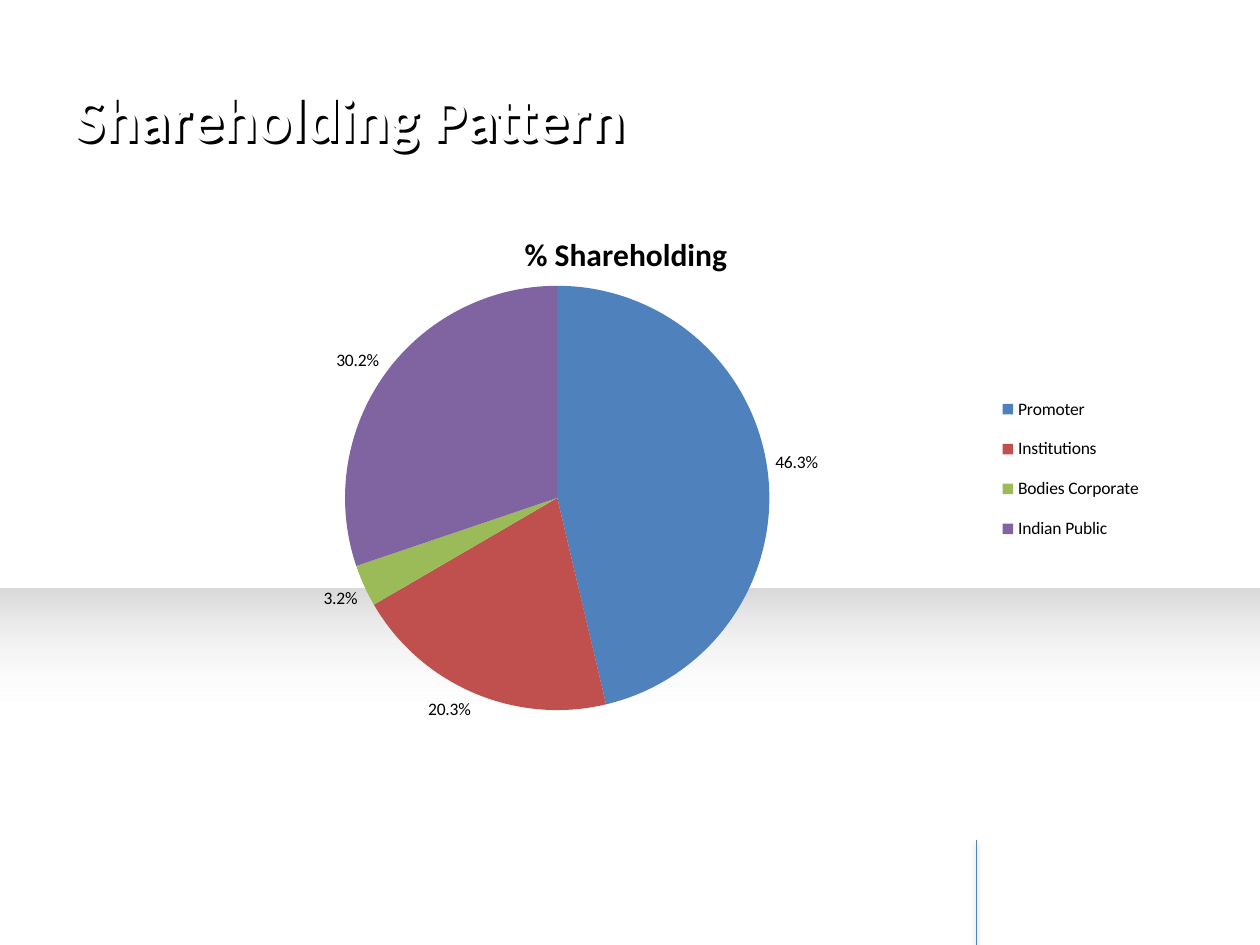
import pptx
import pptx.util
import pptx.chart.data
import pptx.dml.color
import pptx.enum.chart
import pptx.enum.shapes
import pptx.enum.text
import pptx.oxml
import pptx.oxml.ns

Inches, Pt = pptx.util.Inches, pptx.util.Pt
qn = pptx.oxml.ns.qn
COLORS = {
    "white": "FFFFFF", "black": "000000", "gray": "D9D9D9", "blue": "4F81BD",
    "red": "C0504D", "green": "9BBB59", "purple": "8064A2",
}


def write(frame, text, size=18, color="black", bold=False, font="Calibri"):
    run = frame.paragraphs[0].add_run()
    run.text = text
    run.font.size, run.font.bold = Pt(size), bold
    run.font.color.rgb = rgb(color)
    run.font.name = font


def rgb(name):
    return pptx.dml.color.RGBColor.from_string(COLORS[name])


deck = pptx.Presentation()
deck.slide_width, deck.slide_height = Inches(10), Inches(7.5)
slide = deck.slides.add_slide(deck.slide_layouts[6])
shapes = slide.shapes

# Floor band fading from gray to clear white
band = shapes.add_shape(pptx.enum.shapes.MSO_SHAPE.RECTANGLE,
                        Inches(0), Inches(4.67), Inches(10), Inches(2.6))
band.shadow.inherit = False
band.line.fill.background()
band.fill.gradient()
band.fill.gradient_angle = 270
for stop, name, place in zip(band.fill.gradient_stops, ("gray", "white"), (0, 0.39)):
    stop.color.rgb = rgb(name)
    stop.position = place
clear = band._element.spPr.findall(".//" + qn("a:srgbClr"))[-1]
clear.append(pptx.oxml.parse_xml(f'<a:alpha {pptx.oxml.ns.nsdecls("a")} val="0"/>'))

# Footer rule
rule = shapes.add_connector(pptx.enum.shapes.MSO_CONNECTOR.STRAIGHT,
                            Inches(7.75), Inches(6.67), Inches(7.75), Inches(7.5))
rule.line.color.rgb = rgb("blue")
rule.line.width = Pt(0.5)

# Title in white letters
box = shapes.add_textbox(Inches(0.5), Inches(0.3), Inches(9), Inches(1.25))
box.text_frame.word_wrap = True
box.text_frame.vertical_anchor = pptx.enum.text.MSO_ANCHOR.MIDDLE
write(box.text_frame, "Shareholding Pattern", size=36, color="white", bold=True)

# Shadows: soft under the rule, hard behind the title
for item, blur, dist, turn, alpha in ((rule, 3.1, 1.6, 90, 38), (box, 0, 2, 45, 100)):
    item._element.spPr.append(pptx.oxml.parse_xml(
        f'<a:effectLst {pptx.oxml.ns.nsdecls("a")}><a:outerShdw blurRad="{Pt(blur)}" '
        f'dist="{Pt(dist)}" dir="{turn * 60000}" algn="tl" rotWithShape="0">'
        f'<a:srgbClr val="{COLORS["black"]}"><a:alpha val="{alpha * 1000}"/></a:srgbClr>'
        "</a:outerShdw></a:effectLst>"))

# Pie chart
data = pptx.chart.data.CategoryChartData(number_format="0.0%")
data.categories = ["Promoter ", "Institutions", "Bodies Corporate", "Indian Public"]
data.add_series("Series 1", (0.463, 0.203, 0.032, 0.302))
chart = shapes.add_chart(pptx.enum.chart.XL_CHART_TYPE.PIE, Inches(0.92), Inches(1.58),
                         Inches(8.42), Inches(4.33), data).chart
chart.font.size, chart.font.name = Pt(10), "Calibri"
chart.font.color.rgb = rgb("black")
chart.has_title = True
write(chart.chart_title.text_frame, "% Shareholding", bold=True)

plot = chart.plots[0]
plot.vary_by_categories = True
for spot, name in enumerate(("blue", "red", "green", "purple")):
    fill = plot.series[0].points[spot].format.fill
    fill.solid()
    fill.fore_color.rgb = rgb(name)

plot.has_data_labels = True
labels = plot.data_labels
labels.show_value, labels.show_percentage = True, False
labels.number_format, labels.number_format_is_linked = "0.0%", False
labels.position = pptx.enum.chart.XL_LABEL_POSITION.OUTSIDE_END

chart.has_legend = True
chart.legend.position = pptx.enum.chart.XL_LEGEND_POSITION.RIGHT
chart.legend.include_in_layout = False

# Places of title, pie and legend, as shares of the chart
for part, index, target, share in (
    (chart.chart_title._element, 1, "", (0.38, 0.05)),
    (chart._chartSpace.chart.plotArea, 0, '<c:layoutTarget val="inner"/>',
     (0.216, 0.158, 0.4, 0.78)),
    (chart.legend._element, 1, "", (0.82, 0.33, 0.16, 0.33)),
):
    for old in part.findall(qn("c:layout")):
        part.remove(old)
    modes = '<c:xMode val="edge"/><c:yMode val="edge"/>'
    sizes = "".join(f'<c:{key} val="{val}"/>' for key, val in zip("xywh", share))
    part.insert(index, pptx.oxml.parse_xml(
        f'<c:layout {pptx.oxml.ns.nsdecls("c")}><c:manualLayout>'
        f"{target}{modes}{sizes}</c:manualLayout></c:layout>"))

deck.save("out.pptx")
